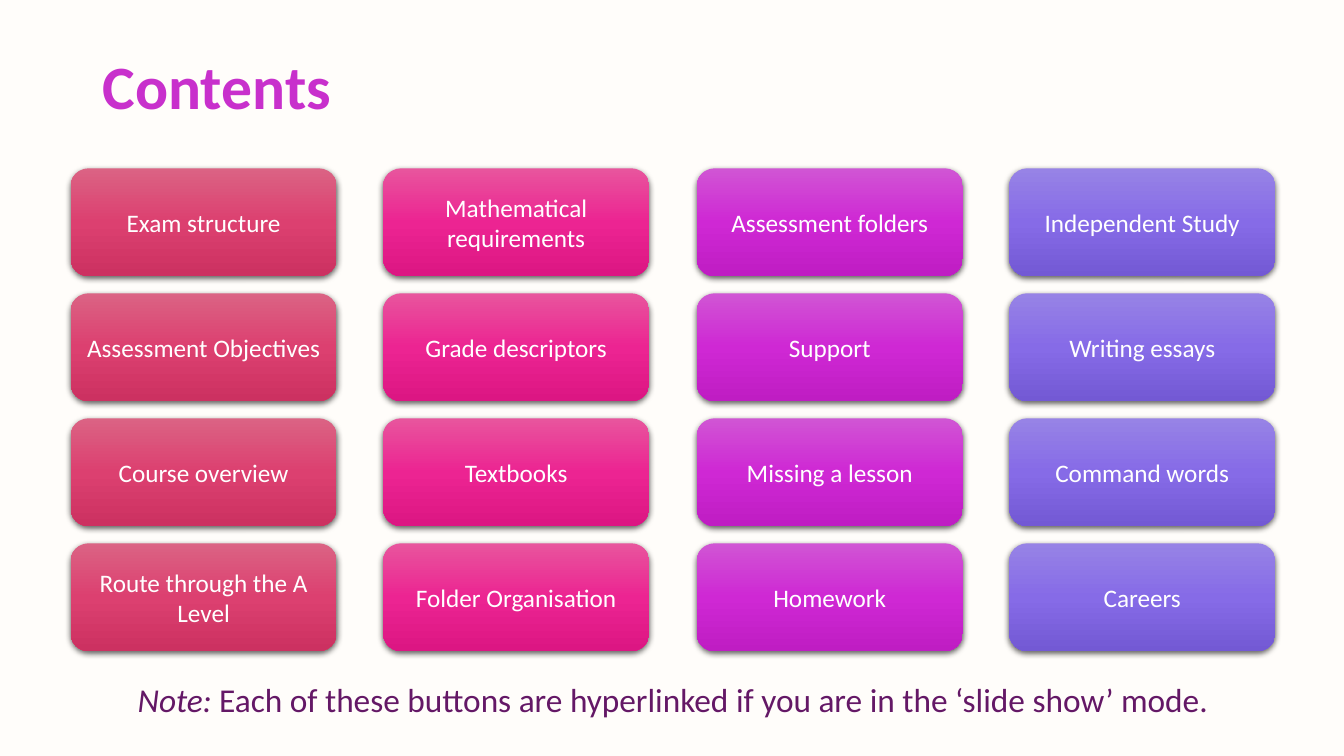
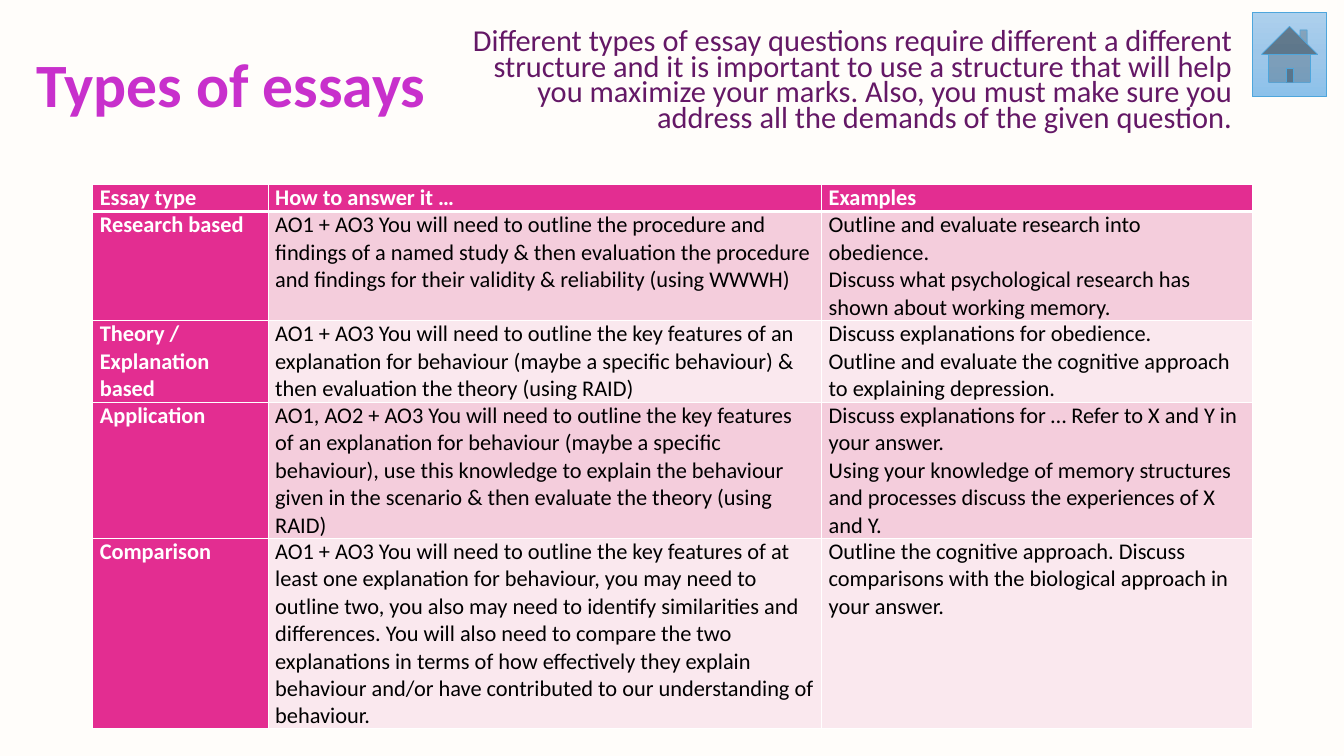
from copy import deepcopy
from dataclasses import dataclass
from typing import NamedTuple

from lxml.etree import SubElement
from pptx import Presentation
from pptx.dml.color import RGBColor
from pptx.enum.shapes import MSO_SHAPE as Shape
from pptx.enum.text import MSO_ANCHOR as Anchor, PP_ALIGN as Align
from pptx.oxml.ns import qn
from pptx.util import Emu, Pt

EMU_PER_PX = 9144
FONT = "Calibri"
WHITE = RGBColor(0xFF, 0xFF, 0xFF)
BLACK = RGBColor(0x00, 0x00, 0x00)
CREAM = RGBColor(0xFF, 0xFD, 0xFA)
TITLE_COLOR = RGBColor(0xC8, 0x30, 0xCC)
BODY_COLOR = RGBColor(0x64, 0x18, 0x66)
PINK = RGBColor(0xE3, 0x2D, 0x91)
BANDS = (RGBColor(0xF4, 0xCD, 0xDC), RGBColor(0xFA, 0xE8, 0xEE))
ROSE_STOPS = (RGBColor(0xDB, 0x63, 0x84), RGBColor(0xDC, 0x40, 0x70), RGBColor(0xCC, 0x31, 0x61))
PINK_STOPS = (RGBColor(0xE8, 0x55, 0x9D), RGBColor(0xEC, 0x24, 0x92), RGBColor(0xDC, 0x16, 0x83))
MAGENTA_STOPS = (RGBColor(0xD0, 0x55, 0xD4), RGBColor(0xCF, 0x28, 0xD4), RGBColor(0xBF, 0x1D, 0xC3))
VIOLET_STOPS = (RGBColor(0x97, 0x83, 0xE6), RGBColor(0x86, 0x6B, 0xE7), RGBColor(0x73, 0x59, 0xD4))
HOME_STOPS = (RGBColor(0xAD, 0xD0, 0xED), RGBColor(0x9E, 0xC7, 0xE9), RGBColor(0x8C, 0xC1, 0xEA))
HOME_LINE = RGBColor(0x4E, 0xA6, 0xDC)

BUTTON_LEFT, BUTTON_TOP = 70, 167
BUTTON_WIDTH, BUTTON_HEIGHT = 264, 107
BUTTON_SPAN, BUTTON_ROW_STEP = 931, 124
TABLE_COLUMNS = (174, 549, 427)
TABLE_LINE_HEIGHT = 27


class Box(NamedTuple):
    left: int
    top: int
    width: int
    height: int

    def emu(self) -> tuple[Emu, ...]:
        return tuple(px(length) for length in self)


@dataclass(frozen=True)
class TextStyle:
    size: float
    color: RGBColor
    bold: bool = False
    align: Align = Align.LEFT
    line_spacing: float = 1.0
    anchor: Anchor = Anchor.TOP


@dataclass(frozen=True)
class ButtonColumn:
    stops: tuple[RGBColor, ...]
    labels: tuple[str, ...]


@dataclass(frozen=True)
class EssayRow:
    lines: int
    kind: str
    answer: str
    examples: str
    anchor: Anchor = Anchor.TOP


TITLE_STYLE = TextStyle(44, TITLE_COLOR, True, line_spacing=0.9, anchor=Anchor.MIDDLE)
NOTE_STYLE = TextStyle(23.8, BODY_COLOR, align=Align.CENTER, line_spacing=0.8)
INTRO_STYLE = TextStyle(21.7, BODY_COLOR, align=Align.RIGHT, line_spacing=0.7)
BUTTON_STYLE = TextStyle(18, WHITE, align=Align.CENTER, anchor=Anchor.MIDDLE)
HEADING_STYLE = TextStyle(16, WHITE, True)
CELL_STYLE = TextStyle(16, BLACK)

BUTTON_COLUMNS = (
    ButtonColumn(ROSE_STOPS, ("Exam structure", "Assessment Objectives", "Course overview", "Route through the A Level")),
    ButtonColumn(PINK_STOPS, ("Mathematical requirements", "Grade descriptors", "Textbooks", "Folder Organisation")),
    ButtonColumn(MAGENTA_STOPS, ("Assessment folders", "Support", "Missing a lesson", "Homework")),
    ButtonColumn(VIOLET_STOPS, ("Independent Study", "Writing essays", "Command words", "Careers")),
)

ESSAY_ROWS = (
    EssayRow(1, "Essay type", "How to answer it …", "Examples"),
    EssayRow(
        4,
        "Research based",
        "AO1 + AO3 You will need to outline the procedure and findings of a named study & then evaluation "
        "the procedure and findings for their validity & reliability (using WWWH)",
        "Outline and evaluate research into obedience.\n"
        "Discuss what psychological research has shown about working memory.",
    ),
    EssayRow(
        3,
        "Theory / Explanation based",
        "AO1 + AO3 You will need to outline the key features of an explanation for behaviour "
        "(maybe a specific behaviour) & then evaluation the theory (using RAID)",
        "Discuss explanations for obedience.\n"
        "Outline and evaluate the cognitive approach to explaining depression.",
        Anchor.MIDDLE,
    ),
    EssayRow(
        5,
        "Application",
        "AO1, AO2 + AO3 You will need to outline the key features of an explanation for behaviour "
        "(maybe a specific behaviour), use this knowledge to explain the behaviour given in the scenario "
        "& then evaluate the theory (using RAID)",
        "Discuss explanations for … Refer to X and Y in your answer.\n"
        "Using your knowledge of memory structures and processes discuss the experiences of X and Y.",
    ),
    EssayRow(
        7,
        "Comparison",
        "AO1 + AO3 You will need to outline the key features of at least one explanation for behaviour, "
        "you may need to outline two, you also may need to identify similarities and differences. "
        "You will also need to compare the two explanations in terms of how effectively they explain "
        "behaviour and/or have contributed to our understanding of behaviour.",
        "Outline the cognitive approach. Discuss comparisons with the biological approach in your answer.",
    ),
)


def px(length: int) -> Emu:
    return Emu(length * EMU_PER_PX)


def format_text(text_frame, style: TextStyle) -> None:
    for paragraph in text_frame.paragraphs:
        paragraph.alignment = style.align
        paragraph.line_spacing = style.line_spacing
        for run in paragraph.runs:
            run.font.name = FONT
            run.font.size = Pt(style.size)
            run.font.bold = style.bold
            run.font.color.rgb = style.color


def add_text(slide, box: Box, text: str, style: TextStyle, lead: str = "") -> None:
    text_frame = slide.shapes.add_textbox(*box.emu()).text_frame
    text_frame.word_wrap = True
    text_frame.vertical_anchor = style.anchor
    paragraph = text_frame.paragraphs[0]
    if lead:
        lead_run = paragraph.add_run()
        lead_run.text = lead
        lead_run.font.italic = True
    paragraph.add_run().text = text
    format_text(text_frame, style)


def add_gradient_shape(slide, kind: Shape, box: Box, colors: tuple[RGBColor, ...]):
    shape = slide.shapes.add_shape(kind, *box.emu())
    shape.shadow.inherit = False
    shape.fill.gradient()
    shape.fill.gradient_angle = 270
    stop_list = shape._element.spPr.find(qn("a:gradFill")).find(qn("a:gsLst"))
    stop_list.insert(1, deepcopy(stop_list[0]))
    for index, (stop, color) in enumerate(zip(shape.fill.gradient_stops, colors)):
        stop.color.rgb = color
        stop.position = index / 2
    return shape


def add_soft_shadow(shape) -> None:
    effects = shape._element.spPr.find(qn("a:effectLst"))
    shadow = SubElement(
        effects, qn("a:outerShdw"), blurRad=str(Pt(4.5)), dist=str(Pt(1.5)), dir="5400000", algn="ctr", rotWithShape="0"
    )
    color = SubElement(shadow, qn("a:srgbClr"), val=str(BLACK))
    SubElement(color, qn("a:alpha"), val="63000")


def add_button(slide, box: Box, label: str, colors: tuple[RGBColor, ...]) -> None:
    button = add_gradient_shape(slide, Shape.ROUNDED_RECTANGLE, box, colors)
    button.line.fill.background()
    add_soft_shadow(button)
    text_frame = button.text_frame
    text_frame.word_wrap = True
    text_frame.vertical_anchor = BUTTON_STYLE.anchor
    text_frame.text = label
    format_text(text_frame, BUTTON_STYLE)


def add_borders(cell, top: int, bottom: int) -> None:
    properties = cell._tc.get_or_add_tcPr()
    for side, width in (("L", 1), ("R", 1), ("T", top), ("B", bottom)):
        line = SubElement(properties, qn(f"a:ln{side}"), w=str(Pt(width)))
        SubElement(SubElement(line, qn("a:solidFill")), qn("a:srgbClr"), val=str(WHITE))


def add_essay_table(slide, left: int, top: int) -> None:
    height = TABLE_LINE_HEIGHT * sum(row.lines for row in ESSAY_ROWS)
    box = Box(left, top, sum(TABLE_COLUMNS), height)
    table = slide.shapes.add_table(len(ESSAY_ROWS), len(TABLE_COLUMNS), *box.emu()).table
    table.horz_banding = False
    for column, width in zip(table.columns, TABLE_COLUMNS):
        column.width = px(width)
    for row_index, row in enumerate(ESSAY_ROWS):
        table.rows[row_index].height = px(TABLE_LINE_HEIGHT * row.lines)
        for column_index, text in enumerate((row.kind, row.answer, row.examples)):
            heading = row_index == 0 or column_index == 0
            cell = table.cell(row_index, column_index)
            cell.margin_left = cell.margin_right = px(7)
            cell.margin_top = cell.margin_bottom = 0
            cell.vertical_anchor = Anchor.TOP if heading else row.anchor
            add_borders(cell, 3 if row_index == 1 else 1, 3 if row_index == 0 else 1)
            cell.fill.solid()
            cell.fill.fore_color.rgb = PINK if heading else BANDS[(row_index - 1) % 2]
            cell.text_frame.text = text
            format_text(cell.text_frame, HEADING_STYLE if heading else CELL_STYLE)


def add_titled_slide(presentation, title: str, box: Box):
    slide = presentation.slides.add_slide(presentation.slide_layouts[6])
    slide.background.fill.solid()
    slide.background.fill.fore_color.rgb = CREAM
    add_text(slide, box, title, TITLE_STYLE)
    return slide


def build_contents(presentation) -> None:
    slide = add_titled_slide(presentation, "Contents", Box(92, 16, 1150, 145))
    add_text(
        slide,
        Box(92, 677, 1150, 47),
        "Each of these buttons are hyperlinked if you are in the ‘slide show’ mode.",
        NOTE_STYLE,
        lead="Note: ",
    )
    for column_index, column in enumerate(BUTTON_COLUMNS):
        left = BUTTON_LEFT + round(BUTTON_SPAN * column_index / (len(BUTTON_COLUMNS) - 1))
        for row_index, label in enumerate(column.labels):
            top = BUTTON_TOP + row_index * BUTTON_ROW_STEP
            add_button(slide, Box(left, top, BUTTON_WIDTH, BUTTON_HEIGHT), label, column.stops)


def build_essay_types(presentation) -> None:
    slide = add_titled_slide(presentation, "Types of essays", Box(26, 14, 575, 145))
    add_text(
        slide,
        Box(428, 26, 804, 145),
        "Different types of essay questions require different a different structure and it is important "
        "to use a structure that will help you maximize your marks. Also, you must make sure you address "
        "all the demands of the given question.",
        INTRO_STYLE,
    )
    add_essay_table(slide, 92, 183)
    home = add_gradient_shape(slide, Shape.ACTION_BUTTON_HOME, Box(1242, 12, 74, 84), HOME_STOPS)
    home.line.color.rgb = HOME_LINE
    home.line.width = Pt(0.5)


def main() -> None:
    presentation = Presentation()
    presentation.slide_width = px(1333)
    presentation.slide_height = px(750)
    build_contents(presentation)
    build_essay_types(presentation)
    presentation.save("out.pptx")


if __name__ == "__main__":
    main()
